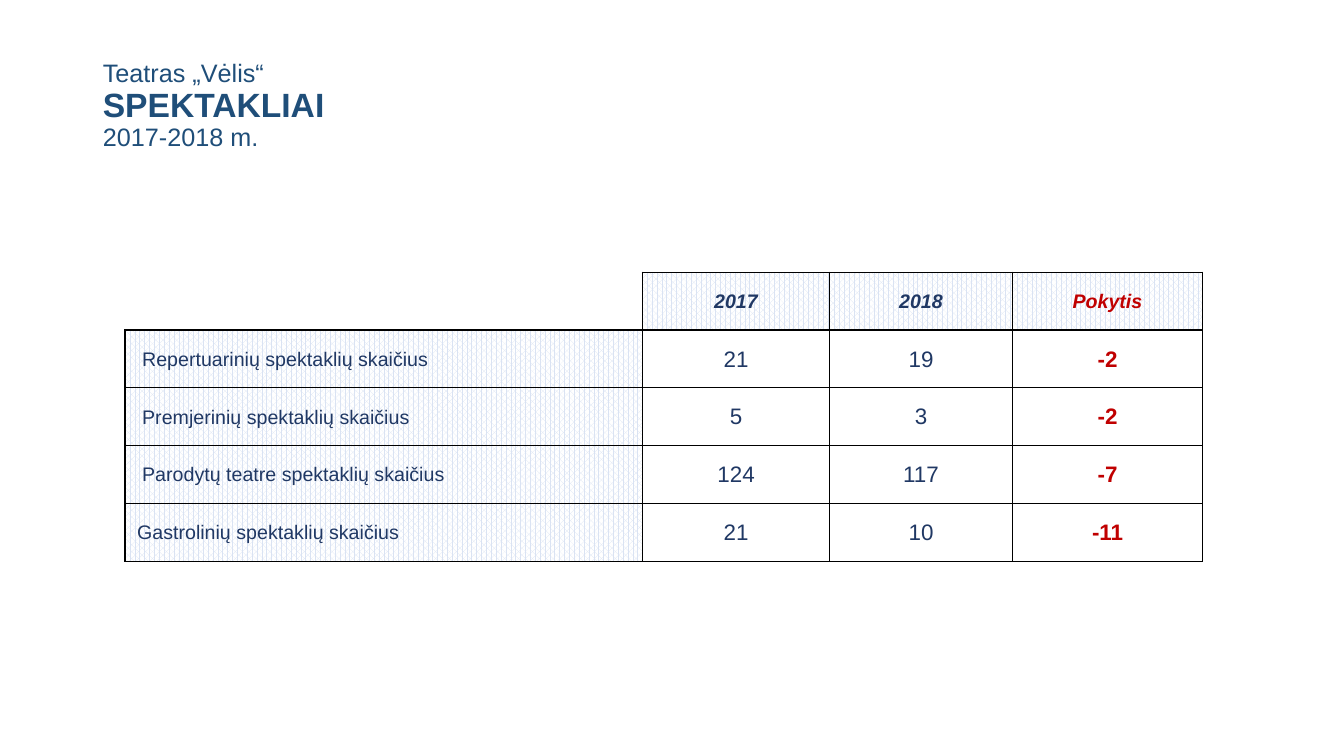
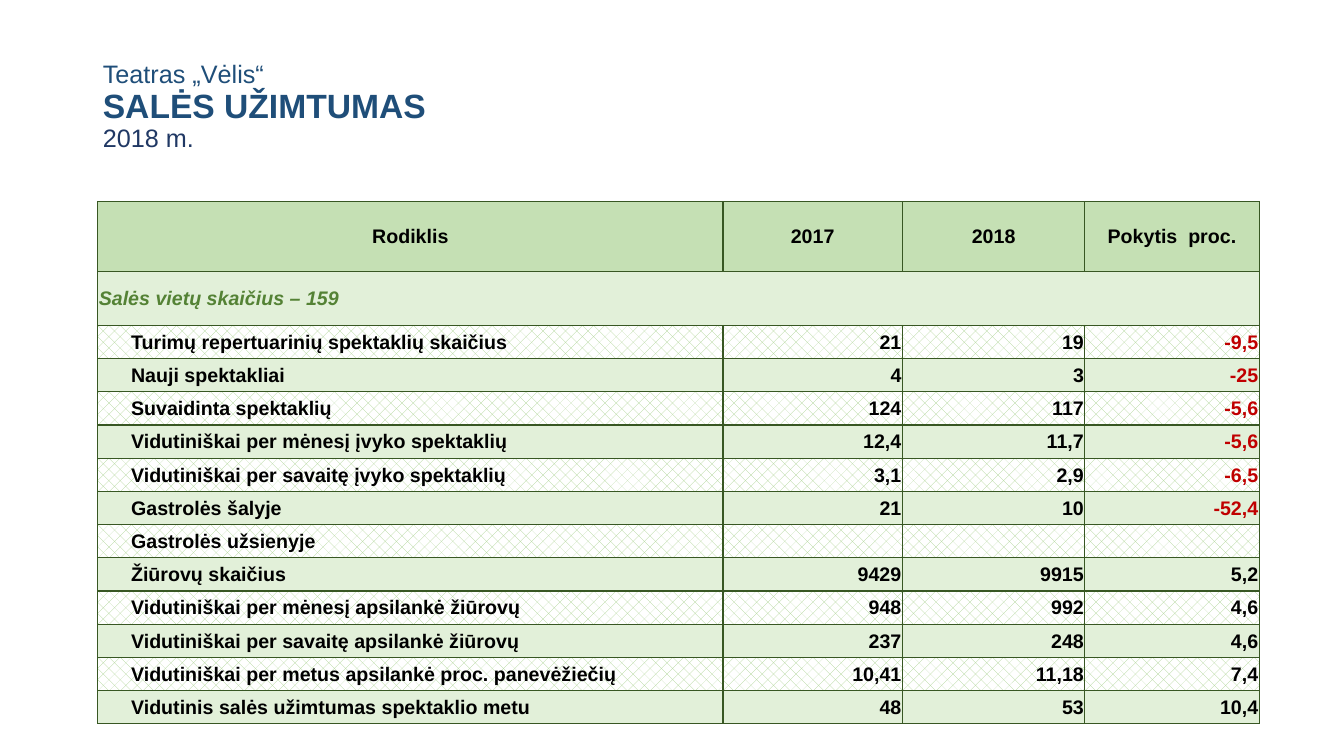
from lxml.etree import SubElement
from pptx import Presentation
from pptx.dml.color import RGBColor
from pptx.enum.dml import MSO_PATTERN
from pptx.enum.text import MSO_ANCHOR, MSO_AUTO_SIZE, PP_ALIGN
from pptx.oxml.ns import qn
from pptx.util import Emu, Pt

# Shared style
EMU_PER_PX = 9144  # 100 px to the inch
FONT = "Arial"
PLAIN_TABLE = "{2D5ABB26-0587-4C30-8999-92F81FD0307C}"

BLACK = RGBColor(0x00, 0x00, 0x00)
WHITE = RGBColor(0xFF, 0xFF, 0xFF)
BLUE = RGBColor(0x1F, 0x4E, 0x79)
NAVY = RGBColor(0x20, 0x38, 0x64)
RED = RGBColor(0xC0, 0x00, 0x00)
PALE_BLUE = RGBColor(0xDA, 0xE3, 0xF3)
DARK_GREEN = RGBColor(0x38, 0x57, 0x23)
GREEN = RGBColor(0x54, 0x82, 0x35)
MID_GREEN = RGBColor(0xA9, 0xD1, 0x8E)
HEADER_GREEN = RGBColor(0xC5, 0xE0, 0xB4)
PALE_GREEN = RGBColor(0xE2, 0xF0, 0xD9)

# Patterned fills: pattern and foreground colour
BLUE_WEAVE = (MSO_PATTERN.PERCENT_70, PALE_BLUE)
GREEN_WEAVE = (MSO_PATTERN.PERCENT_25, MID_GREEN)

LEFT, CENTER, RIGHT = PP_ALIGN.LEFT, PP_ALIGN.CENTER, PP_ALIGN.RIGHT


def px(n):
    return Emu(round(n * EMU_PER_PX))


class Deck:
    def __init__(self):
        self.prs = Presentation()
        self.prs.slide_width, self.prs.slide_height = px(1333), px(750)
        self.s = None

    def slide(self):
        self.s = self.prs.slides.add_slide(self.prs.slide_layouts[5])

    def format_run(self, r, size, color, bold=False, italic=False):
        r.font.name = FONT
        r.font.size = Pt(size)
        r.font.color.rgb = color
        r.font.bold = bold
        r.font.italic = italic

    def title(self, top, height, heading, period, period_color=BLUE):
        sp = self.s.shapes.title
        sp.left, sp.top, sp.width, sp.height = px(92), px(top), px(1150), px(height)
        tf = sp.text_frame
        tf.auto_size = MSO_AUTO_SIZE.NONE
        tf.vertical_anchor = MSO_ANCHOR.MIDDLE
        tf.text = f"Teatras „Vėlis“\v{heading}\v{period}"
        p = tf.paragraphs[0]
        p.alignment = LEFT
        p.line_spacing = 0.9
        styles = ((18, BLUE, False), (24, BLUE, True), (18, period_color, False))
        for r, style in zip(p.runs, styles):
            self.format_run(r, *style)
        for br in p._p.findall(qn("a:br")):
            SubElement(br, qn("a:rPr"), sz="1800")

    def table(self, left, top, cols, rows):
        frame = self.s.shapes.add_table(len(rows), len(cols), px(left), px(top),
                                        px(sum(cols)), px(sum(rows)))
        table = frame.table
        table.first_row = table.horz_banding = False
        table._tbl.tblPr.find(qn("a:tableStyleId")).text = PLAIN_TABLE
        for col, width in zip(table.columns, cols):
            col.width = px(width)
        for row, height in zip(table.rows, rows):
            row.height = px(height)
        return table

    def borders(self, cell, color, sides="LRTB"):
        tcPr = cell._tc.get_or_add_tcPr()
        for side in sides:
            ln = SubElement(tcPr, qn(f"a:ln{side}"), w=str(Pt(1)))
            fill = SubElement(ln, qn("a:solidFill"))
            SubElement(fill, qn("a:srgbClr"), val=str(color))

    def fill(self, cell, fill):
        if fill is None:
            cell.fill.background()
        elif isinstance(fill, RGBColor):
            cell.fill.solid()
            cell.fill.fore_color.rgb = fill
        else:
            cell.fill.patterned()
            cell.fill.pattern, cell.fill.fore_color.rgb = fill
            cell.fill.back_color.rgb = WHITE

    def cell(self, cell, text, border, fill, align, size, color,
             bold=False, italic=False, indent=0):
        self.borders(cell, border)
        self.fill(cell, fill)
        cell.vertical_anchor = MSO_ANCHOR.MIDDLE
        cell.margin_left = px(1 + indent)
        cell.margin_right = cell.margin_top = px(1)
        cell.margin_bottom = 0
        p = cell.text_frame.paragraphs[0]
        p.text = text
        p.alignment = align
        for r in p.runs:
            self.format_run(r, size, color, bold, italic)


def performances(deck):
    deck.slide()
    deck.title(31, 149, "SPEKTAKLIAI", "2017-2018 m.")
    data = [
        ("Repertuarinių spektaklių skaičius", 16, "21", "19", "-2"),
        ("Premjerinių spektaklių skaičius", 16, "5", "3", "-2"),
        ("Parodytų teatre spektaklių skaičius", 16, "124", "117", "-7"),
        ("Gastrolinių spektaklių skaičius", 11, "21", "10", "-11"),
    ]
    table = deck.table(124, 270, [513, 186, 181, 189], [287 / 5] * 5)

    # Header row with an open corner
    deck.borders(table.cell(0, 0), BLACK, "RB")
    for j, text in enumerate(("2017", "2018", "Pokytis"), 1):
        deck.cell(table.cell(0, j), text, BLACK, BLUE_WEAVE, CENTER, 14,
                  RED if j == 3 else NAVY, bold=True, italic=True)

    # Figures
    for i, (label, indent, *values) in enumerate(data, 1):
        deck.cell(table.cell(i, 0), label, BLACK, BLUE_WEAVE, LEFT, 14, NAVY,
                  indent=indent)
        for j, value in enumerate(values, 1):
            change = j == 3
            deck.cell(table.cell(i, j), value, BLACK, None, CENTER, 16,
                      RED if change else NAVY, bold=change)


def occupancy(deck):
    deck.slide()
    deck.title(40, 133, "SALĖS UŽIMTUMAS", "2018 m.", NAVY)
    data = [
        ("Turimų repertuarinių spektaklių skaičius", "21", "19", "-9,5"),
        ("Nauji spektakliai", "4", "3", "-25"),
        ("Suvaidinta spektaklių", "124", "117", "-5,6"),
        ("Vidutiniškai per mėnesį įvyko spektaklių", "12,4", "11,7", "-5,6"),
        ("Vidutiniškai per savaitę įvyko spektaklių", "3,1", "2,9", "-6,5"),
        ("Gastrolės šalyje", "21", "10", "-52,4"),
        ("Gastrolės užsienyje", "", "", ""),
        ("Žiūrovų skaičius", "9429", "9915", "5,2"),
        ("Vidutiniškai per mėnesį apsilankė žiūrovų", "948", "992", "4,6"),
        ("Vidutiniškai per savaitę apsilankė žiūrovų", "237", "248", "4,6"),
        ("Vidutiniškai per metus apsilankė proc. panevėžiečių",
         "10,41", "11,18", "7,4"),
        ("Vidutinis salės užimtumas spektaklio metu", "48", "53", "10,4"),
    ]
    heights = [69, 54] + [395 / len(data)] * len(data)
    table = deck.table(97, 200, [620, 178, 181, 173], heights)

    # Header row
    for j, text in enumerate(("Rodiklis", "2017", "2018", "Pokytis  proc.")):
        deck.cell(table.cell(0, j), text, DARK_GREEN, HEADER_GREEN, CENTER, 14,
                  BLACK, bold=True)

    # Seat count across the full width
    for j in range(4):
        deck.cell(table.cell(1, j), "" if j else "Salės vietų skaičius – 159",
                  DARK_GREEN, PALE_GREEN, LEFT, 14, GREEN, bold=True, italic=True)
    table.cell(1, 0).merge(table.cell(1, 3))

    # Figures in alternating rows
    for i, row in enumerate(data):
        fill = PALE_GREEN if i % 2 else GREEN_WEAVE
        for j, text in enumerate(row):
            deck.cell(table.cell(i + 2, j), text, DARK_GREEN, fill,
                      RIGHT if j else LEFT, 14,
                      RED if text.startswith("-") else BLACK,
                      bold=True, indent=0 if j else 32)


def main():
    deck = Deck()
    performances(deck)
    occupancy(deck)
    deck.prs.save("out.pptx")


if __name__ == "__main__":
    main()
